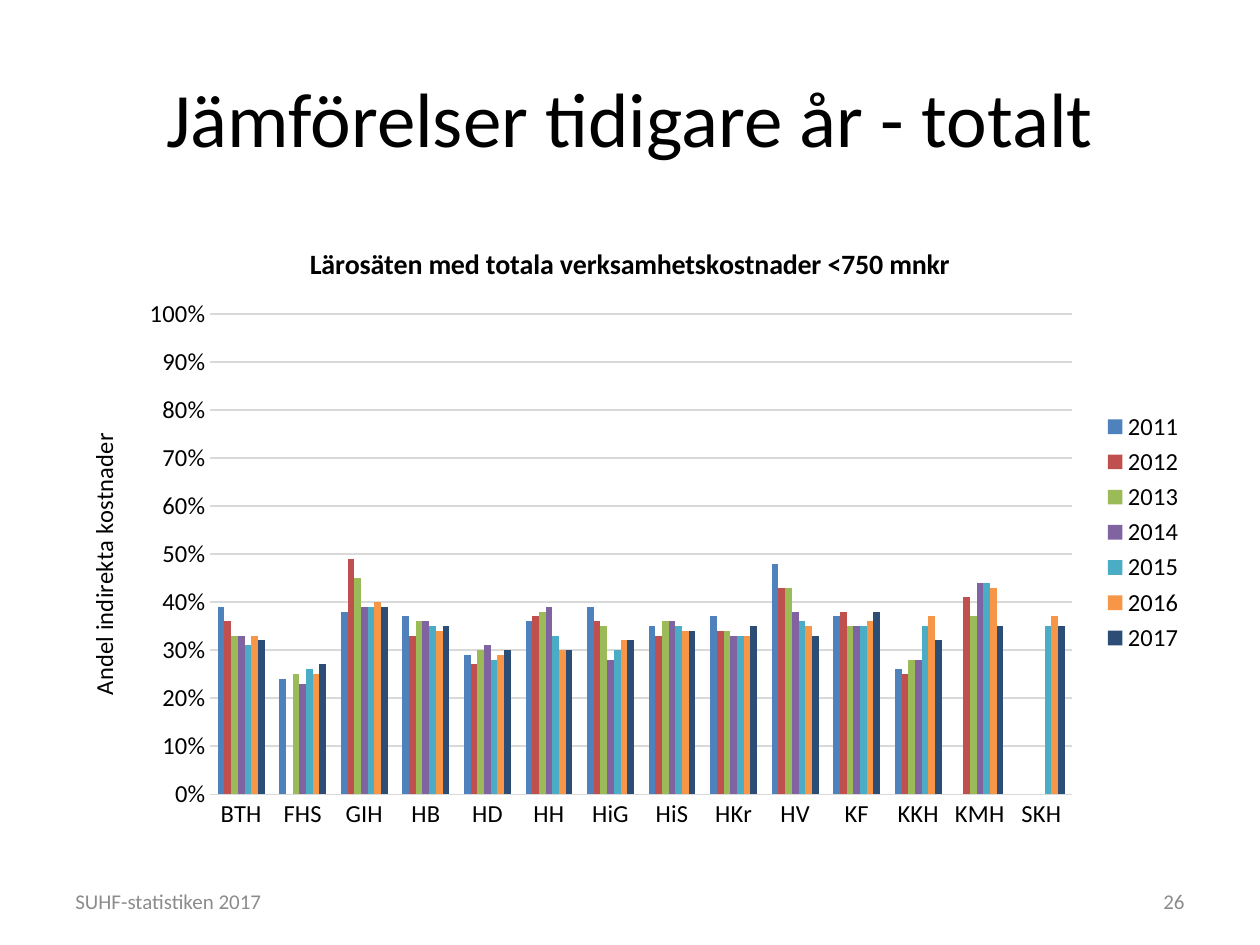
from dataclasses import dataclass

from lxml import etree
from pptx import Presentation
from pptx import util as u
from pptx.chart import data as cd
from pptx.dml.color import RGBColor
from pptx.enum import chart as ch, text as t
from pptx.oxml import ns

PX = 9144
FONT = "Calibri"
HUES = {
    "ink": "000000", "grey": "8C8C8C", "grid": "D9D9D9",
    "2011": "4F81BD", "2012": "C0504D", "2013": "9BBB59", "2014": "8064A2",
    "2015": "4BACC6", "2016": "F79646", "2017": "2C4D75",
}
CATS = "BTH FHS GIH HB HD HH HiG HiS HKr HV KF KKH KMH SKH".split()
NA = None
SHARES = {
    "2011": [39, 24, 38, 37, 29, 36, 39, 35, 37, 48, 37, 26, NA, NA],
    "2012": [36, NA, 49, 33, 27, 37, 36, 33, 34, 43, 38, 25, 41, NA],
    "2013": [33, 25, 45, 36, 30, 38, 35, 36, 34, 43, 35, 28, 37, NA],
    "2014": [33, 23, 39, 36, 31, 39, 28, 36, 33, 38, 35, 28, 44, NA],
    "2015": [31, 26, 39, 35, 28, 33, 30, 35, 33, 36, 35, 35, 44, 35],
    "2016": [33, 25, 40, 34, 29, 30, 32, 34, 33, 35, 36, 37, 43, 37],
    "2017": [32, 27, 39, 35, 30, 30, 32, 34, 35, 33, 38, 32, 35, 35],
}
PLOT = {"x": 0.13, "y": 0.15, "w": 0.76, "h": 0.77}


@dataclass
class Box:
    x: int
    y: int
    w: int
    h: int

    def emu(self) -> list[int]:
        return [n * PX for n in (self.x, self.y, self.w, self.h)]


@dataclass
class Label:
    box: Box
    words: str
    size: int
    hue: str
    align: t.PP_ALIGN


TITLE = Label(Box(50, 30, 900, 125), "Jämförelser tidigare år - totalt", 44, "ink", t.PP_ALIGN.CENTER)
NOTES = [
    Label(Box(50, 695, 434, 40), "SUHF-statistiken 2017", 12, "grey", t.PP_ALIGN.LEFT),
    Label(Box(717, 695, 233, 40), "26", 12, "grey", t.PP_ALIGN.RIGHT),
]


def put(obj, vals: dict) -> None:
    for key, val in vals.items():
        setattr(obj, key, val)


def rgb(name: str) -> RGBColor:
    return RGBColor.from_string(HUES[name])


def style(font, size: int, hue: str = "ink", bold: bool = False) -> None:
    put(font, {"name": FONT, "size": u.Pt(size), "bold": bold})
    font.color.rgb = rgb(hue)


def write(shape, label: Label) -> None:
    put(shape, dict(zip(("left", "top", "width", "height"), label.box.emu())))
    frame = shape.text_frame
    put(frame, {"word_wrap": True, "vertical_anchor": t.MSO_ANCHOR.MIDDLE, "text": label.words})
    para = frame.paragraphs[0]
    para.alignment = label.align
    style(para.runs[0].font, label.size, label.hue)


def head(title, words: str, size: int, bold: bool) -> None:
    title.text_frame.text = words
    style(title.text_frame.paragraphs[0].runs[0].font, size, bold=bold)


def rule(line) -> None:
    line.color.rgb = rgb("grid")
    line.width = u.Pt(0.75)


def place(chart) -> None:
    area = chart._chartSpace.chart.plotArea
    for old in area.findall(ns.qn("c:layout")):
        area.remove(old)
    node = etree.Element(ns.qn("c:layout"))
    area.insert(0, node)
    man = etree.SubElement(node, ns.qn("c:manualLayout"))
    vals = {"layoutTarget": "inner", "xMode": "edge", "yMode": "edge", **PLOT}
    for key, val in vals.items():
        etree.SubElement(man, ns.qn(f"c:{key}")).set("val", str(val))


def graph(slide, box: Box) -> None:
    data = cd.CategoryChartData(number_format="0%")
    data.categories = CATS
    for year, vals in SHARES.items():
        data.add_series(year, [NA if v is NA else v / 100 for v in vals])
    chart = slide.shapes.add_chart(ch.XL_CHART_TYPE.COLUMN_CLUSTERED, *box.emu(), data).chart
    style(chart.font, 14)
    head(chart.chart_title, "Lärosäten med totala verksamhetskostnader <750 mnkr", 16, True)
    chart.chart_title.include_in_layout = False

    plot = chart.plots[0]
    put(plot, {"gap_width": 219, "overlap": 0, "vary_by_categories": False})
    for bar in plot.series:
        bar.invert_if_negative = False
        bar.format.fill.solid()
        bar.format.fill.fore_color.rgb = rgb(bar.name)

    cat, val = chart.category_axis, chart.value_axis
    for axis in (cat, val):
        put(axis, {"major_tick_mark": ch.XL_TICK_MARK.NONE, "minor_tick_mark": ch.XL_TICK_MARK.NONE})
        style(axis.tick_labels.font, 14)
    put(val, {"minimum_scale": 0, "maximum_scale": 1, "major_unit": 0.1, "has_major_gridlines": True})
    put(val.tick_labels, {"number_format": "0%", "number_format_is_linked": False})
    head(val.axis_title, "Andel indirekta kostnader", 14, False)
    val.format.line.fill.background()
    rule(cat.format.line)
    rule(val.major_gridlines.format.line)

    chart.has_legend = True
    put(chart.legend, {"position": ch.XL_LEGEND_POSITION.RIGHT, "include_in_layout": False})
    style(chart.legend.font, 14)
    place(chart)


def main() -> None:
    deck = Presentation()
    put(deck, {"slide_width": 1000 * PX, "slide_height": 750 * PX})
    slide = deck.slides.add_slide(deck.slide_layouts[5])
    graph(slide, Box(50, 175, 900, 495))
    write(slide.shapes.title, TITLE)
    for note in NOTES:
        write(slide.shapes.add_textbox(*note.box.emu()), note)
    deck.save("out.pptx")


if __name__ == "__main__":
    main()
